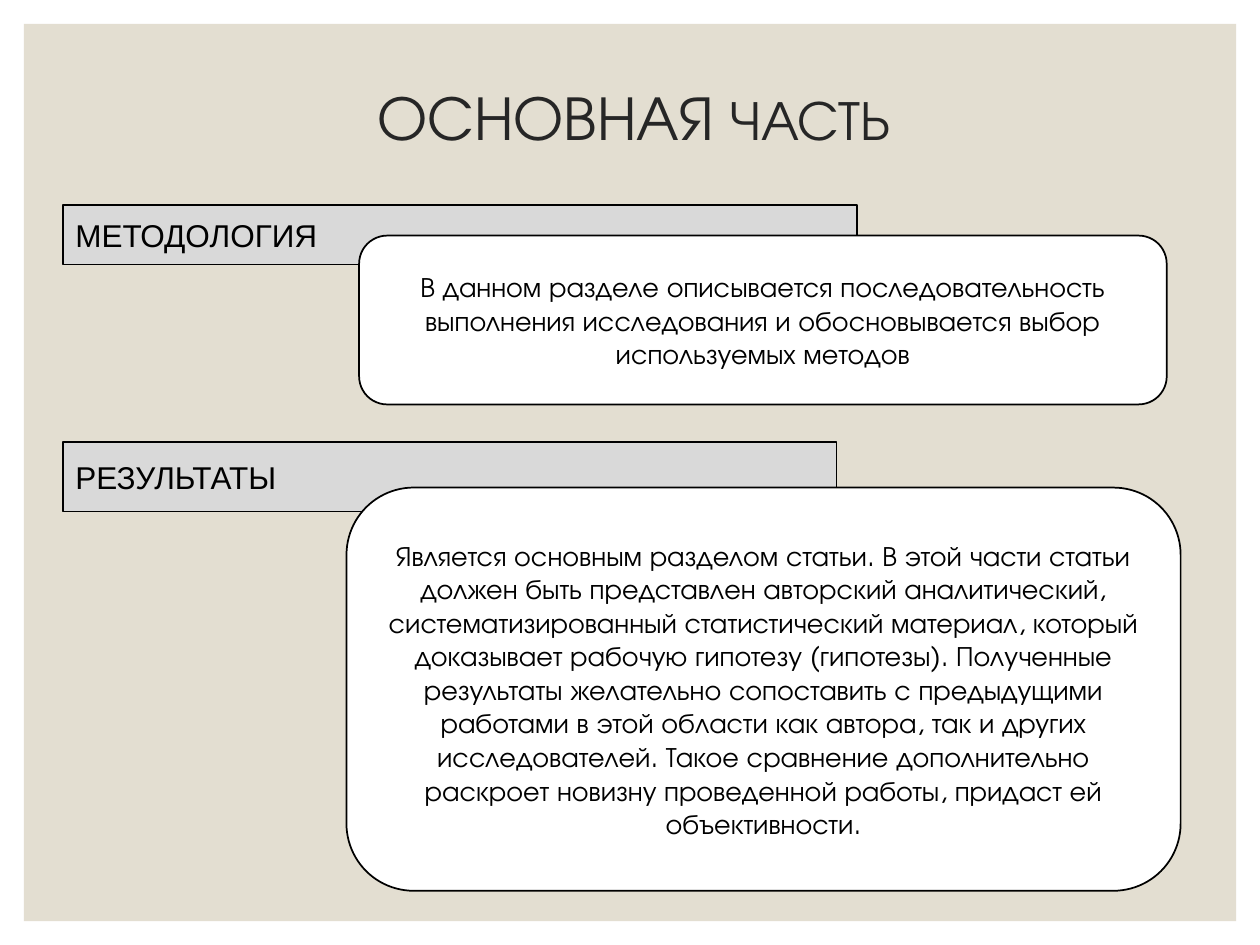
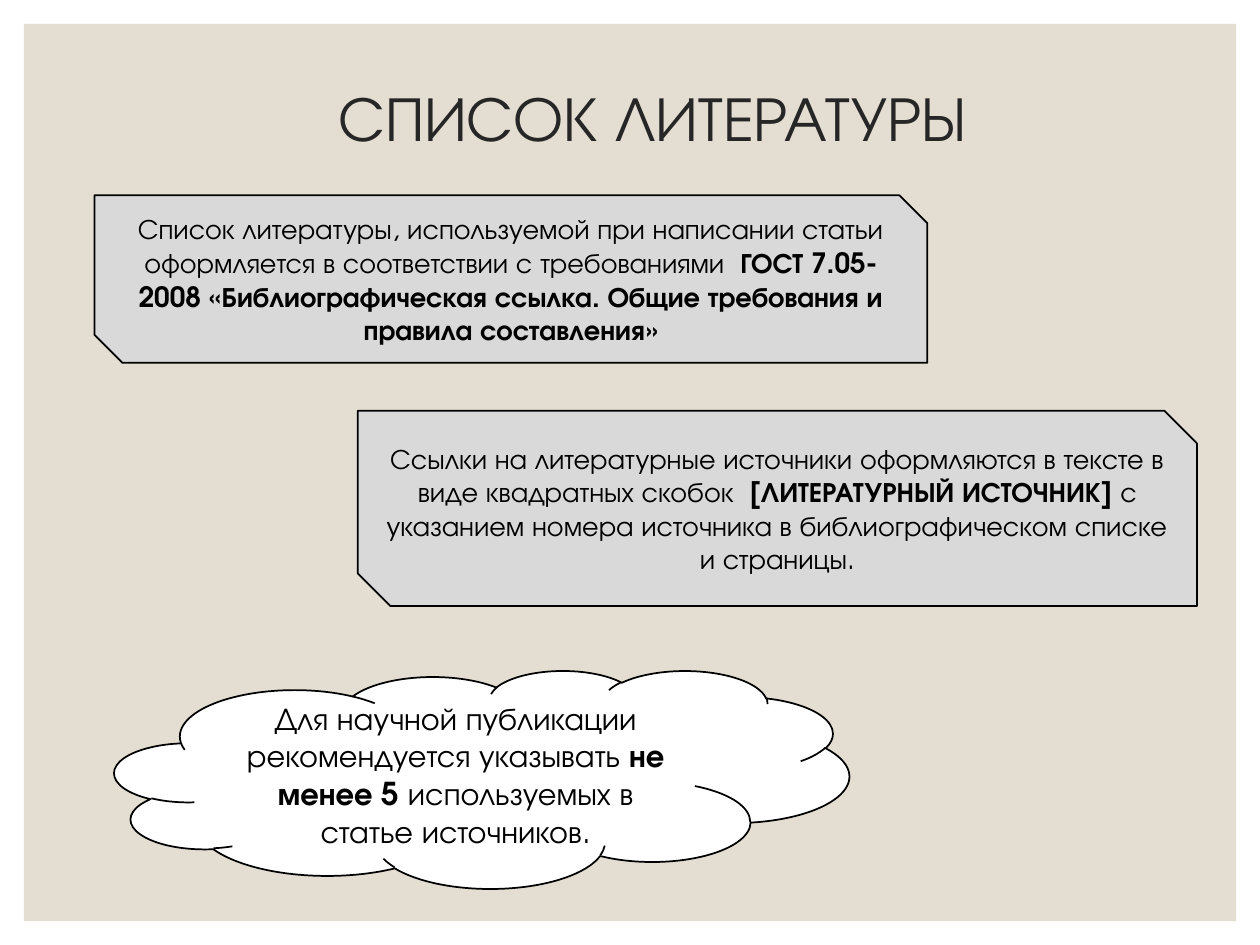
from dataclasses import dataclass

from pptx import Presentation
from pptx.dml.color import RGBColor
from pptx.enum import shapes, text
from pptx.util import Inches, Pt

KIND = shapes.MSO_SHAPE
CENTER, LEFT = text.PP_ALIGN.CENTER, text.PP_ALIGN.LEFT


@dataclass(frozen=True)
class Theme:
    page: str = "FFFFFF"
    panel: str = "E3DED1"
    label: str = "D9D9D9"
    note: str = "FFFFFF"
    ink: str = "000000"
    title_ink: str = "262626"
    font: str = "TeX Gyre Adventor"
    label_font: str = "Arial"
    title_size: int = 36
    title_small: int = 32
    large: int = 18
    body: int = 16


THEME = Theme()

# Content: title runs are (text, size); block runs alternate plain and bold
PANEL_BOX = (0.19, 0.19, 9.62, 7.12)
LABEL = dict(fill=THEME.label, size=THEME.large, font=THEME.label_font, align=LEFT)
NOTE = dict(fill=THEME.note, size=THEME.body)
SNIPPED = dict(kind=KIND.SNIP_2_DIAG_RECTANGLE, fill=THEME.label, size=THEME.body)

SLIDES = [
    dict(
        title=[("ОСНОВНАЯ", THEME.title_size), (" ЧАСТЬ", THEME.title_small)],
        title_box=(0.83, 0.2, 8.4, 1.5),
        blocks=[
            dict(LABEL, kind=KIND.RECTANGLE, box=(0.5, 1.63, 6.3, 0.47),
                 runs=["МЕТОДОЛОГИЯ"]),
            dict(LABEL, kind=KIND.FLOWCHART_PROCESS, box=(0.5, 3.51, 6.14, 0.55),
                 runs=["РЕЗУЛЬТАТЫ"]),
            dict(NOTE, kind=KIND.ROUNDED_RECTANGLE, box=(2.85, 1.87, 6.41, 1.34),
                 runs=["В данном разделе описывается последовательность выполнения "
                       "исследования и обосновывается выбор используемых методов"]),
            dict(NOTE, kind=KIND.ROUNDED_RECTANGLE, box=(2.75, 3.87, 6.62, 3.2),
                 runs=["Является основным разделом статьи. В этой части статьи должен "
                       "быть представлен авторский аналитический, систематизированный "
                       "статистический материал, который доказывает рабочую гипотезу "
                       "(гипотезы). Полученные результаты желательно сопоставить с "
                       "предыдущими работами в этой области как автора, так и других "
                       "исследователей. Такое сравнение дополнительно раскроет новизну "
                       "проведенной работы, придаст ей объективности."]),
        ],
    ),
    dict(
        title=[("СПИСОК ЛИТЕРАТУРЫ", THEME.title_size)],
        title_box=(0.98, 0.21, 8.4, 1.5),
        blocks=[
            dict(SNIPPED, box=(0.75, 1.55, 6.61, 1.33),
                 runs=["Список литературы, используемой при написании статьи "
                       "оформляется в соответствии с требованиями  ",
                       "ГОСТ 7.05-2008 «Библиографическая ссылка. Общие требования "
                       "и правила составления»"]),
            dict(SNIPPED, box=(2.84, 3.26, 6.66, 1.55),
                 runs=["Ссылки на литературные источники оформляются в тексте в виде "
                       "квадратных скобок ",
                       " [ЛИТЕРАТУРНЫЙ ИСТОЧНИК]",
                       " с указанием номера источника в библиографическом списке "
                       "и страницы."]),
            dict(NOTE, kind=KIND.CLOUD, box=(0.91, 5.32, 5.83, 1.73), size=THEME.large,
                 runs=["Для научной публикации рекомендуется указывать ",
                       "не менее 5 ",
                       "используемых в статье источников."]),
        ],
    ),
]


def color(value):
    return RGBColor.from_string(value)


def add_filled(slide, kind, box, fill):
    shape = slide.shapes.add_shape(kind, *map(Inches, box))
    shape.shadow.inherit = False
    shape.fill.solid()
    shape.fill.fore_color.rgb = color(fill)
    return shape


def add_block(slide, kind, box, fill, size, runs, font=THEME.font, align=CENTER):
    block = add_filled(slide, kind, box, fill)
    block.line.color.rgb = color(THEME.ink)
    block.line.width = Pt(1)
    frame = block.text_frame
    frame.word_wrap = True
    frame.vertical_anchor = text.MSO_ANCHOR.MIDDLE
    paragraph = frame.paragraphs[0]
    paragraph.alignment = align
    paragraph.font.name = font
    paragraph.font.size = Pt(size)
    paragraph.font.color.rgb = color(THEME.ink)
    for position, words in enumerate(runs):
        run = paragraph.add_run()
        run.text = words
        if position % 2:
            run.font.bold = True


def set_title(slide, runs, box):
    title = slide.shapes.title
    title.left, title.top, title.width, title.height = map(Inches, box)
    title.text_frame.vertical_anchor = text.MSO_ANCHOR.MIDDLE
    paragraph = title.text_frame.paragraphs[0]
    paragraph.alignment = CENTER
    paragraph.line_spacing = 0.9
    paragraph.font.name = THEME.font
    paragraph.font.color.rgb = color(THEME.title_ink)
    for words, size in runs:
        run = paragraph.add_run()
        run.text = words
        run.font.size = Pt(size)


def move_to_layout(shape, layout):
    """Place a shape behind everything on the layout, under a free id."""
    shape.element.xpath(".//p:cNvPr")[0].set("id", "100")
    layout.shapes.element.insert(2, shape.element)


def main():
    deck = Presentation()
    deck.slide_width, deck.slide_height = Inches(10), Inches(7.5)
    layout = deck.slide_layouts[5]

    # Shared page colour and panel
    layout.background.fill.solid()
    layout.background.fill.fore_color.rgb = color(THEME.page)
    for number, content in enumerate(SLIDES):
        slide = deck.slides.add_slide(layout)
        if number == 0:
            panel = add_filled(slide, KIND.RECTANGLE, PANEL_BOX, THEME.panel)
            panel.line.fill.background()
            move_to_layout(panel, layout)

        # Title and text blocks
        set_title(slide, content["title"], content["title_box"])
        for block in content["blocks"]:
            add_block(slide, **block)

    deck.save("out.pptx")


if __name__ == "__main__":
    main()
